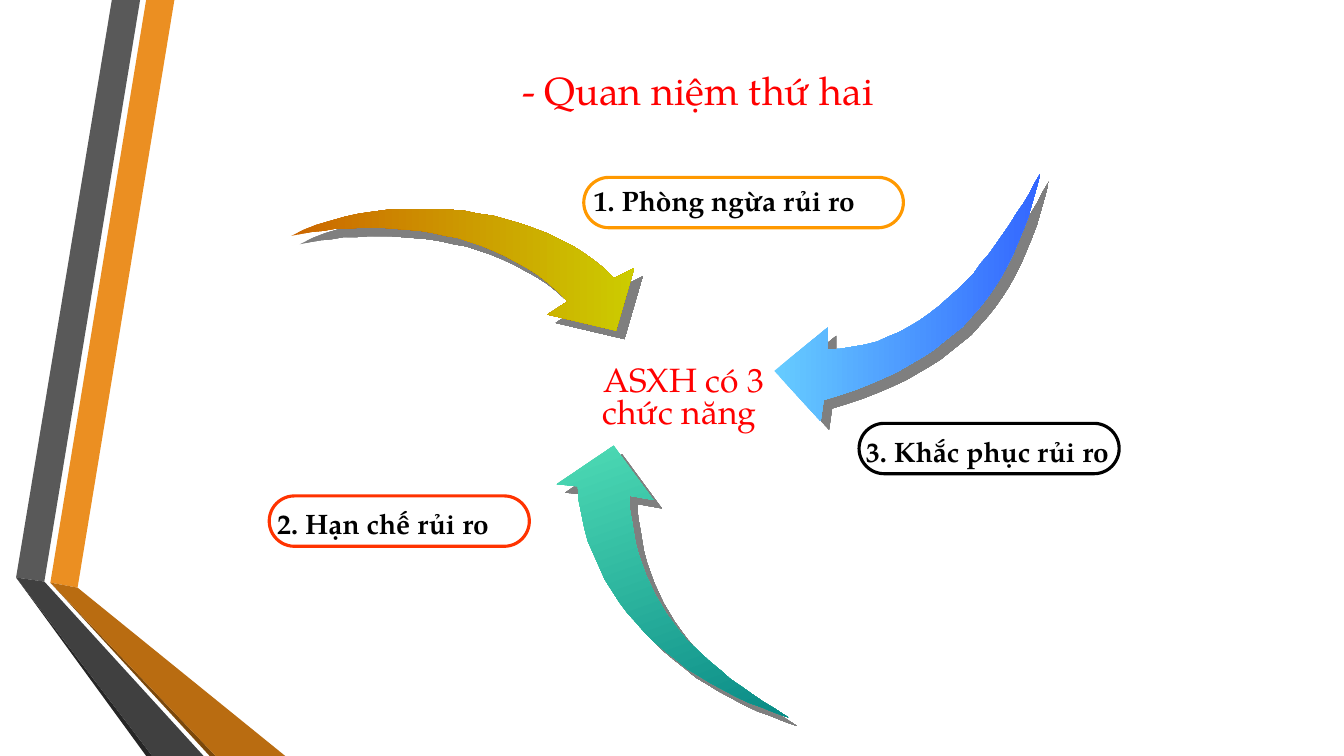
import math
from lxml import etree
from pptx import Presentation
from pptx import util as u
from pptx.dml.color import RGBColor
from pptx.enum import shapes, text
from pptx.oxml import ns

FONT = "TeX Gyre Pagella"
CELL = u.Inches(0.01)
COLUMNS, ROWS = 1333, 750
RIBBON_WIDTH = 28
PILL_HEIGHT = 50
EDGE_STEPS = 24

deck = Presentation()
deck.slide_width, deck.slide_height = COLUMNS * CELL, ROWS * CELL
slide = deck.slides.add_slide(deck.slide_layouts[6])


def paint(color_format, value):
    color_format.rgb = RGBColor.from_string(value)


def write(box, words, size, color, bold=False):
    left, top, width, height = (n * CELL for n in box)
    frame = slide.shapes.add_textbox(left, top, width, height).text_frame
    frame.word_wrap = True
    line = frame.paragraphs[0]
    line.text = words
    line.font.name, line.font.size, line.font.bold = FONT, u.Pt(size), bold
    paint(line.font.color, color)
    return frame


ribbons = [
    (145, (50, 578), (77, 583), (208, 214, 283), ("EB8F22", "7B480B", "B96C11")),
    (111, (16, 573), (44, 577), (145, 151, 202), ("595959", "262626", "404040")),
]
for top, knee_left, knee_right, feet, colors in ribbons:
    rim_foot, left_foot, right_foot = ((x, ROWS) for x in feet)
    upper = [(top, 0), (top + RIBBON_WIDTH, 0), knee_right, knee_left]
    rim = [knee_left, rim_foot, left_foot]
    lower = [knee_left, left_foot, right_foot, knee_right]
    for corners, color in zip((upper, rim, lower), colors):
        outline = slide.shapes.build_freeform(*corners[0], scale=CELL)
        outline.add_line_segments(corners[1:], close=True)
        ribbon = outline.convert_to_shape()
        ribbon.shadow.inherit = False
        ribbon.fill.solid()
        paint(ribbon.fill.fore_color, color)
        ribbon.line.fill.background()

title = write((217, 58, 950, 62), "- Quan niệm thứ hai", 28, "FF0000")
center = write((579, 358, 198, 75), "ASXH có 3 chức năng ", 24, "FF0000")
for frame in (title, center):
    frame.vertical_anchor = text.MSO_ANCHOR.MIDDLE
    frame.paragraphs[0].alignment = text.PP_ALIGN.CENTER
center.paragraphs[0].line_spacing = 0.8
center.paragraphs[0].space_before = u.Pt(4.8)
center.paragraphs[0].space_after = u.Pt(6)

arrows = [
    dict(tail=(782, 711), outer=[(682, 663), (607, 586), (573, 483)],
         head=[(552, 480), (609, 442), (648, 496)],
         inner=[(624, 492), (645, 580), (697, 650)],
         colors=("53E1B8", "008080"), angle=270, turn=-19.7, pivot=(664, 587.5)),
    dict(tail=(289, 234), outer=[(400, 207), (517, 222), (609, 276)],
         head=[(629, 266), (611, 328), (543, 312)],
         inner=[(563, 299), (478, 244), (380, 226)],
         colors=("CC6600", "CCCC00"), angle=0, turn=0, pivot=(0, 0)),
    dict(tail=(1032, 172), outer=[(993, 275), (925, 348), (817, 397)],
         head=[(814, 418), (768, 368), (821, 325)],
         inner=[(821, 347), (912, 318), (981, 252)],
         colors=("66CCFF", "3366FF"), angle=0, turn=0, pivot=(0, 0)),
]
for part in arrows:
    edges = []
    for knots in ([part["tail"], *part["outer"]], [*part["inner"], part["tail"]]):
        edge = []
        for step in range(EDGE_STEPS + 1):
            t = 3 * step / EDGE_STEPS
            weights = [math.prod((t - j) / (i - j) for j in range(4) if j != i)
                       for i in range(4)]
            edge.append([sum(w * n for w, n in zip(weights, axis)) for axis in zip(*knots)])
        edges.append(edge)
    outer_edge, inner_edge = edges

    cx, cy = part["pivot"]
    cos, sin = math.cos(math.radians(part["turn"])), math.sin(math.radians(part["turn"]))
    upright = [(cx + (x - cx) * cos + (y - cy) * sin, cy - (x - cx) * sin + (y - cy) * cos)
               for x, y in outer_edge + part["head"] + inner_edge]
    outline = slide.shapes.build_freeform(*upright[0], scale=CELL)
    outline.add_line_segments(upright[1:], close=True)
    arrow = outline.convert_to_shape()
    arrow.rotation = part["turn"]
    arrow.fill.gradient()
    arrow.fill.gradient_angle = part["angle"]
    for stop, color in zip(arrow.fill.gradient_stops, part["colors"]):
        paint(stop.color, color)
    arrow.line.fill.background()
    arrow.shadow.inherit = False
    effects = arrow.element.spPr.find(ns.qn("a:effectLst"))
    shade = etree.SubElement(effects, ns.qn("a:outerShdw"), blurRad="0", dist=str(u.Pt(8.5)),
                             dir="2700000", algn="ctr", rotWithShape="0")
    black = etree.SubElement(shade, ns.qn("a:srgbClr"), val="000000")
    etree.SubElement(black, ns.qn("a:alpha"), val="50000")

functions = [
    ("2. Hạn chế rủi ro", (265, 498, 259, 44), (267, 492, 258), "FF3300"),
    ("1. Phòng ngừa rủi ro", (579, 177, 333, 43), (579, 176, 317), "FF9900"),
    ("3. Khắc phục rủi ro", (849, 426, 268, 44), (852, 420, 258), "000000"),
]
for words, label_box, pill_box, color in functions:
    write(label_box, words, 20, "000000", bold=True)
    pill = slide.shapes.add_shape(shapes.MSO_SHAPE.ROUNDED_RECTANGLE,
                                  *(n * CELL for n in (*pill_box, PILL_HEIGHT)))
    pill.adjustments[0] = 0.5
    pill.shadow.inherit = False
    pill.fill.background()
    paint(pill.line.color, color)
    pill.line.width = u.Pt(2.25)

deck.save("out.pptx")
